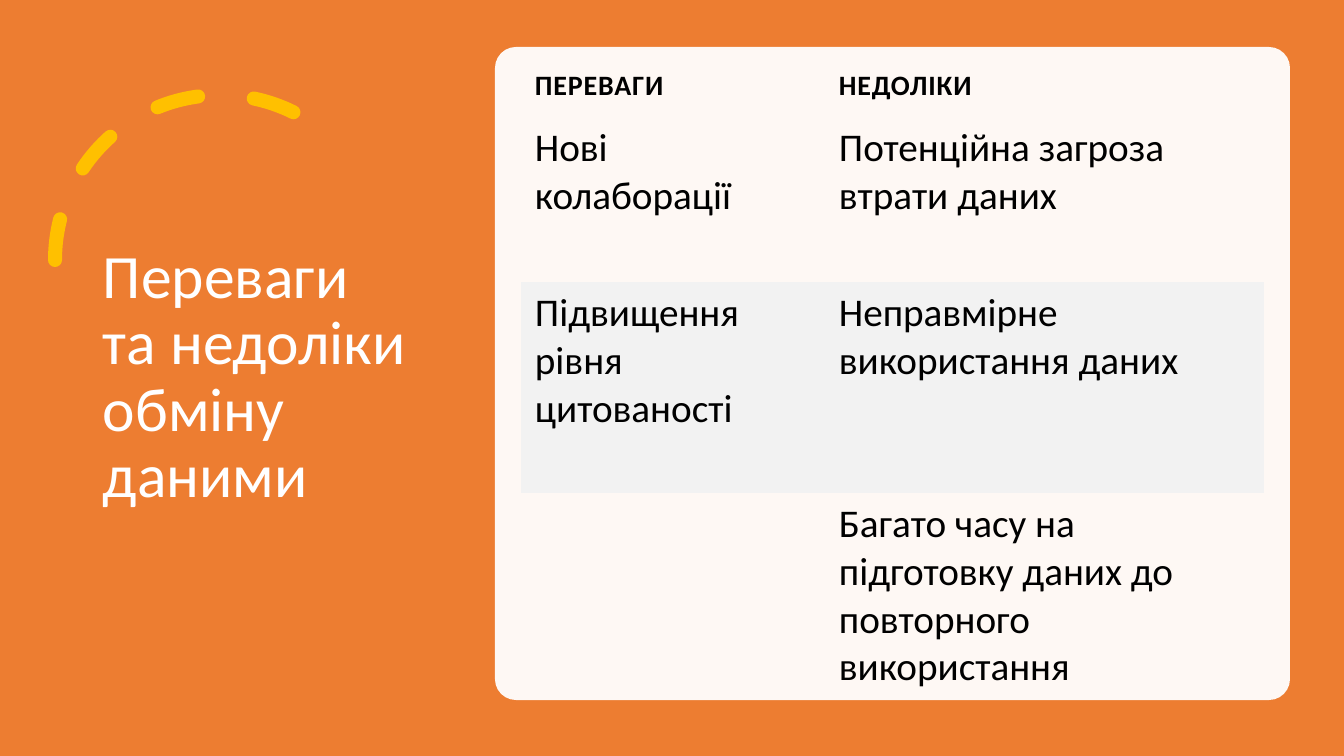
from lxml.etree import SubElement
from pptx import Presentation
from pptx.dml.color import RGBColor
from pptx.enum.dml import MSO_LINE
from pptx.enum.shapes import MSO_SHAPE
from pptx.enum.text import MSO_ANCHOR
from pptx.oxml.ns import qn
from pptx.util import Emu, Pt

FONT = "Calibri"
WHITE, BLACK, ORANGE, GOLD, BAND = "FFFFFF", "000000", "ED7D31", "FFC000", "F2F2F2"
NO_STYLE = "{2D5ABB26-0587-4C30-8999-92F81FD0307C}"

HEADINGS = ("ПЕРЕВАГИ", "НЕДОЛІКИ")
COMPARISON = [
    ("Нові колаборації", "Потенційна загроза втрати даних"),
    ("Підвищення рівня цитованості", "Неправмірне використання даних"),
    ("", "Багато часу на підготовку даних до повторного використання"),
]


def px(length):
    return Emu(round(length * 12192000 / 1344))


def color(hex_string):
    return RGBColor.from_string(hex_string)


def add_plain_shape(slide, preset, box, fill=None):
    shape = slide.shapes.add_shape(preset, *map(px, box))
    shape.shadow.inherit = False
    shape.line.fill.background()
    if fill:
        shape.fill.solid()
        shape.fill.fore_color.rgb = color(fill)
    else:
        shape.fill.background()
    return shape


def set_font(paragraph, size, hex_string, bold=False):
    font = paragraph.font
    font.name, font.size, font.bold = FONT, Pt(size), bold
    font.color.rgb = color(hex_string)


def add_backdrop(slide, box):
    left, top, _, _ = box
    add_plain_shape(slide, MSO_SHAPE.RECTANGLE, box, ORANGE)

    # Dashed arc, mirrored to open towards the lower right
    arc = add_plain_shape(slide, MSO_SHAPE.ARC, (left + 55, top + 95, 330, 330))
    arc.adjustments[0] = 146.129
    arc.adjustments[1] = 0
    arc._element.spPr.find(qn("a:xfrm")).set("flipH", "1")
    arc.line.color.rgb = color(GOLD)
    arc.line.width = Pt(10)
    arc.line.dash_style = MSO_LINE.DASH
    arc._element.spPr.find(qn("a:ln")).set("cap", "rnd")


def add_title(slide, box):
    title = slide.shapes.add_textbox(*map(px, box)).text_frame
    title.word_wrap = True
    title.vertical_anchor = MSO_ANCHOR.MIDDLE
    paragraph = title.paragraphs[0]
    paragraph.text = "Переваги та недоліки обміну даними"
    paragraph.line_spacing = 0.9
    set_font(paragraph, 44, WHITE)


def fill_cell(cell, text, is_heading, is_banded):
    cell.margin_left = cell.margin_right = cell.margin_bottom = px(14)
    cell.margin_top = px(14 if is_heading else 7)
    cell.vertical_anchor = MSO_ANCHOR.BOTTOM if is_heading else MSO_ANCHOR.TOP
    if is_banded:
        cell.fill.solid()
        cell.fill.fore_color.rgb = color(BAND)
    else:
        cell.fill.background()
    paragraph = cell.text_frame.paragraphs[0]
    set_font(paragraph, 20 if is_heading else 28, BLACK, is_heading)
    if text:
        run = paragraph.add_run()
        run.text = text
        if is_heading:
            run._r.get_or_add_rPr().set("spc", "60")


def add_comparison(slide, box):
    left, top, width, height = box

    # Translucent rounded card
    card = add_plain_shape(slide, MSO_SHAPE.ROUNDED_RECTANGLE, box, WHITE)
    card.adjustments[0] = 0.032
    tint = card._element.spPr.find(qn("a:solidFill"))[0]
    SubElement(tint, qn("a:alpha")).set("val", "95000")

    # Table of advantages and drawbacks
    rows = [HEADINGS, *COMPARISON]
    frame = slide.shapes.add_table(
        len(rows), len(HEADINGS), px(left + 26), px(top + 8), px(width - 52), px(height - 2))
    table = frame.table
    table.first_row = table.horz_banding = False
    table._tbl.tblPr.find(qn("a:tableStyleId")).text = NO_STYLE
    for column, column_width in zip(table.columns, (304, 439)):
        column.width = px(column_width)
    for row, row_height in zip(table.rows, (62, 165, 211, 213)):
        row.height = px(row_height)
    for r, texts in enumerate(rows):
        for c, text in enumerate(texts):
            fill_cell(table.cell(r, c), text, is_heading=r == 0, is_banded=r == 2)


def main():
    deck = Presentation()
    deck.slide_width, deck.slide_height = px(1344), px(756)
    slide = deck.slides.add_slide(deck.slide_layouts[6])
    add_backdrop(slide, (0, 0, 1344, 756))
    add_title(slide, (93, 71, 326, 614))
    add_comparison(slide, (495, 47, 795, 653))
    deck.save("out.pptx")


if __name__ == "__main__":
    main()
